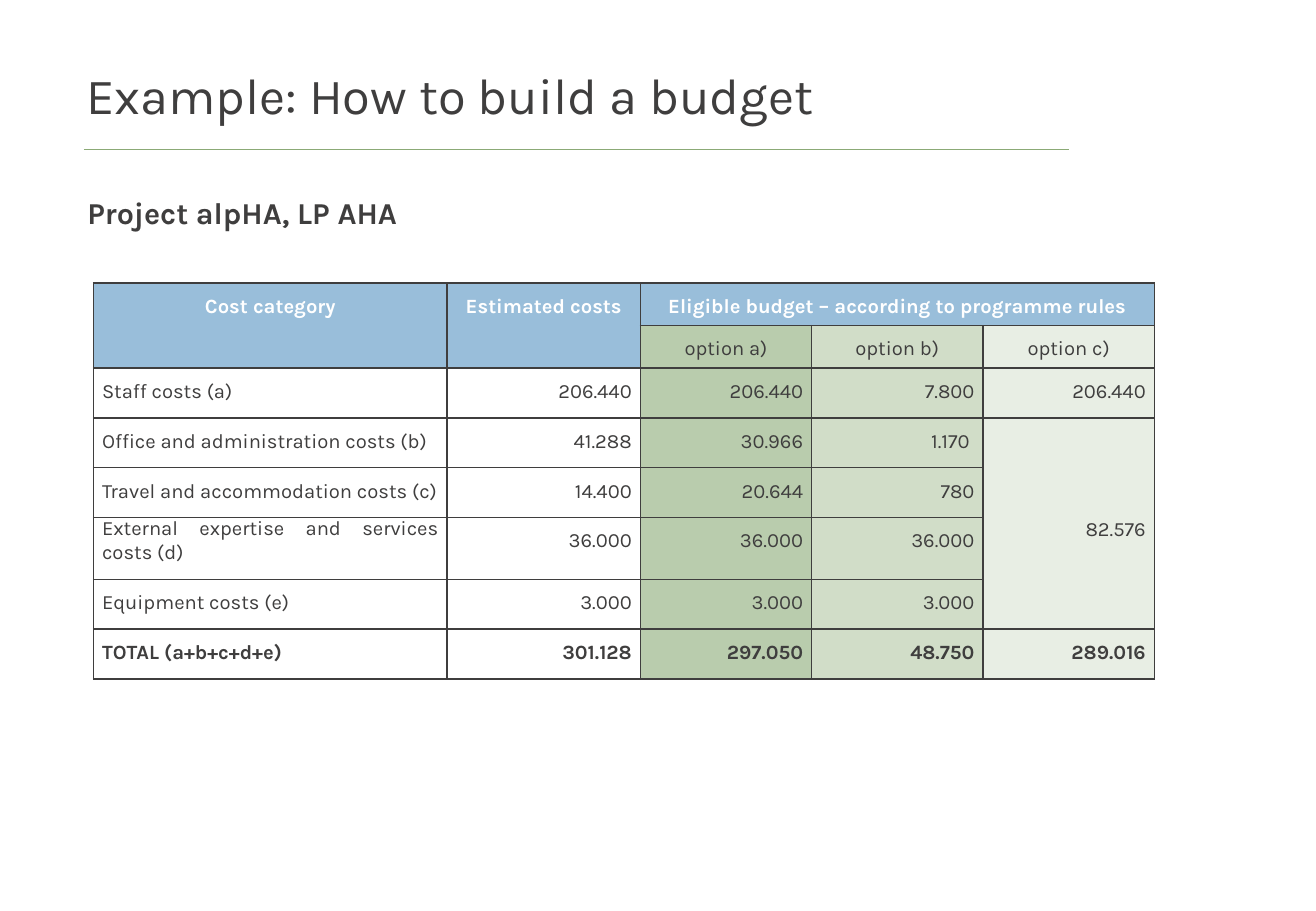
from lxml.etree import SubElement
from pptx import Presentation
from pptx.dml.color import RGBColor
from pptx.enum.shapes import MSO_CONNECTOR
from pptx.enum.text import MSO_ANCHOR, MSO_AUTO_SIZE, PP_ALIGN
from pptx.oxml.ns import qn
from pptx.util import Pt

EMU_PER_PX = 9144  # 100 px to the inch

INK = RGBColor(0x3F, 0x3E, 0x3E)
WHITE = RGBColor(0xFF, 0xFF, 0xFF)
RULE_GREEN = RGBColor(0x8B, 0xAA, 0x76)
HEADER_BLUE = RGBColor(0x99, 0xBE, 0xDA)
OPTION_A = RGBColor(0xB9, 0xCC, 0xAD)
OPTION_B = RGBColor(0xD1, 0xDD, 0xC8)
OPTION_C = RGBColor(0xE8, 0xEE, 0xE4)

COLUMN_FILLS = [WHITE, WHITE, OPTION_A, OPTION_B, OPTION_C]
COLUMN_WIDTHS = [291, 159, 141, 141, 141]
ROW_HEIGHTS = [35, 35, 41, 41, 41, 51, 41, 41]
HEADER_ROWS = 2
TWO_LINE_ROW = 5
BUDGET = [
    ["Cost category", "Estimated costs", "Eligible budget – according to programme rules", "", ""],
    ["", "", "option a)", "option b)", "option c)"],
    ["Staff costs (a)", "206.440", "206.440", "7.800", "206.440"],
    ["Office and administration costs (b)", "41.288", "30.966", "1.170 ", "82.576"],
    ["Travel and accommodation costs (c)", "14.400", "20.644", "780", ""],
    ["External expertise and services costs (d)", "36.000", "36.000", "36.000", ""],
    ["Equipment costs (e)", "3.000", "3.000", "3.000", ""],
    ["TOTAL (a+b+c+d+e)", "301.128", "297.050", "48.750", "289.016"],
]
# first row, first column, last row, last column
MERGES = [(0, 0, 1, 0), (0, 1, 1, 1), (0, 2, 0, 4), (3, 4, 6, 4)]


def px(length):
    return length * EMU_PER_PX


def apply_format(target, values):
    for name, value in values.items():
        setattr(target, name, value)


class BudgetSlide:
    font_name = "Karla"

    def __init__(self, presentation):
        title_only = presentation.slide_layouts[5]
        self.slide = presentation.slides.add_slide(title_only)

    def fill_text(self, frame, text, size, color=INK, bold=False, **paragraph_format):
        paragraph = frame.paragraphs[0]
        apply_format(paragraph, paragraph_format)
        run = paragraph.add_run()
        run.text = text
        apply_format(run.font, {"name": self.font_name, "size": Pt(size), "bold": bold})
        run.font.color.rgb = color

    def title(self, text, left, top, width, height):
        heading = self.slide.shapes.title
        apply_format(heading, {"left": px(left), "top": px(top),
                               "width": px(width), "height": px(height)})
        apply_format(heading.text_frame, {"vertical_anchor": MSO_ANCHOR.BOTTOM,
                                          "auto_size": MSO_AUTO_SIZE.NONE,
                                          "word_wrap": True})
        self.fill_text(heading.text_frame, text, 30, alignment=PP_ALIGN.LEFT)

    def rule(self, left, right, y):
        rule = self.slide.shapes.add_connector(
            MSO_CONNECTOR.STRAIGHT, px(left), px(y), px(right), px(y))
        rule.line.color.rgb = RULE_GREEN
        rule.line.width = Pt(0.5)
        SubElement(rule._element.spPr, qn("a:effectLst"))

    def subtitle(self, text, left, top, width, height):
        project = self.slide.shapes.add_textbox(px(left), px(top), px(width), px(height))
        apply_format(project.text_frame, {"word_wrap": False,
                                          "auto_size": MSO_AUTO_SIZE.SHAPE_TO_FIT_TEXT})
        self.fill_text(project.text_frame, text, 18, bold=True, alignment=PP_ALIGN.LEFT)

    def border(self, cell):
        properties = cell._tc.get_or_add_tcPr()
        for side in ("lnL", "lnR", "lnT", "lnB"):
            edge = SubElement(properties, qn(f"a:{side}"), w=str(int(Pt(1))))
            fill = SubElement(edge, qn("a:solidFill"))
            SubElement(fill, qn("a:srgbClr"), val=str(INK))

    def budget_cell(self, cell, row, column, text):
        apply_format(cell, {"margin_left": px(7), "margin_right": px(7),
                            "margin_top": 0, "margin_bottom": 0})
        self.border(cell)
        top_header = row == 0 or (row < HEADER_ROWS and column < 2)
        cell.fill.solid()
        cell.fill.fore_color.rgb = HEADER_BLUE if top_header else COLUMN_FILLS[column]
        if not text:
            return
        if row < HEADER_ROWS:
            alignment = PP_ALIGN.CENTER
        else:
            alignment = PP_ALIGN.RIGHT if column else PP_ALIGN.JUSTIFY
        two_lines = row == TWO_LINE_ROW and column == 0
        self.fill_text(cell.text_frame, text, 12,
                       color=WHITE if top_header else INK,
                       bold=top_header or row == len(BUDGET) - 1,
                       alignment=alignment,
                       line_spacing=1.0 if two_lines else 1.5,
                       space_after=Pt(10))

    def budget_table(self, left, top):
        table = self.slide.shapes.add_table(
            len(BUDGET), len(COLUMN_WIDTHS), px(left), px(top),
            px(sum(COLUMN_WIDTHS)), px(sum(ROW_HEIGHTS))).table
        apply_format(table, {"first_row": False, "horz_banding": False})
        for column, width in zip(table.columns, COLUMN_WIDTHS):
            column.width = px(width)
        for row, height in zip(table.rows, ROW_HEIGHTS):
            row.height = px(height)
        for first_row, first_column, last_row, last_column in MERGES:
            table.cell(first_row, first_column).merge(table.cell(last_row, last_column))
        for row, texts in enumerate(BUDGET):
            for column, text in enumerate(texts):
                self.budget_cell(table.cell(row, column), row, column, text)
        table.cell(3, 4).vertical_anchor = MSO_ANCHOR.MIDDLE


def main():
    presentation = Presentation()
    apply_format(presentation, {"slide_width": px(1083), "slide_height": px(750)})
    slide = BudgetSlide(presentation)
    slide.rule(69, 880, 123)
    slide.title("Example: How to build a budget", 61, 13, 762, 95)
    slide.budget_table(77, 233)
    slide.subtitle("Project alpHA, LP AHA", 62, 155, 284, 40)
    presentation.save("out.pptx")


if __name__ == "__main__":
    main()
